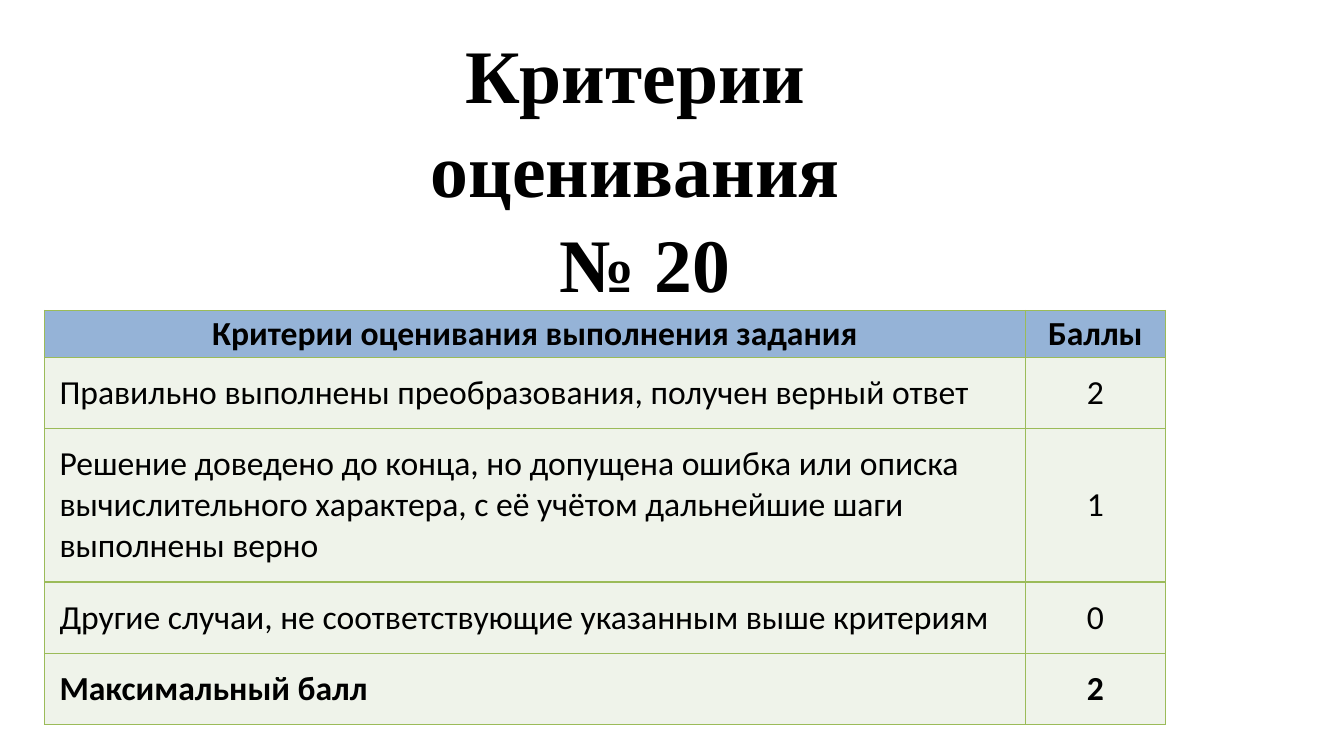
"""Build the slide with the grading criteria for task 20."""
from pptx import Presentation
from pptx.dml.color import RGBColor
from pptx.enum import text
from pptx.oxml import parse_xml
from pptx.oxml import ns
from pptx.util import Inches, Pt

TITLE_LINES = ["Критерии ", "оценивания ", "№ 20"]
ROWS = [
    ("Критерии оценивания выполнения задания", "Баллы"),
    ("Правильно выполнены преобразования, получен верный ответ", "2"),
    ("Решение доведено до конца, но допущена ошибка или описка "
     "вычислительного характера, с её учётом дальнейшие шаги выполнены верно", "1"),
    ("Другие случаи, не соответствующие указанным выше критериям", "0"),
    ("Максимальный балл", "2"),
]
COLUMN_WIDTHS = [9.73, 1.39]
ROW_HEIGHTS = [0.44, 0.68, 1.46, 0.68, 0.68]
TABLE_LEFT, TABLE_TOP = 0.44, 3.08
HEADER_FILL, BODY_FILL, BORDER, BLACK = "95B3D7", "EFF3EA", "9BBB59", "000000"


def color(hex_value):
    return RGBColor.from_string(hex_value)


def add_run(paragraph, content, font_name, size, bold):
    run = paragraph.add_run()
    run.text = content
    run.font.name = font_name
    run.font.size = Pt(size)
    run.font.bold = bold
    run.font.color.rgb = color(BLACK)


def add_borders(cell):
    properties = cell._tc.get_or_add_tcPr()
    for index, side in enumerate(("lnL", "lnR", "lnT", "lnB")):
        properties.insert(index, parse_xml(
            f'<a:{side} {ns.nsdecls("a")} w="{Pt(1)}"><a:solidFill>'
            f'<a:srgbClr val="{BORDER}"/></a:solidFill></a:{side}>'))


def add_title(slide):
    title = slide.shapes.title
    title.left, title.top = Inches(0.48), Inches(0.36)
    title.width, title.height = Inches(11.83), Inches(2.57)
    frame = title.text_frame
    frame.auto_size = text.MSO_AUTO_SIZE.NONE
    frame.vertical_anchor = text.MSO_ANCHOR.MIDDLE
    paragraph = frame.paragraphs[0]
    paragraph.alignment = text.PP_ALIGN.CENTER
    paragraph.line_spacing = 1.04
    for index, line in enumerate(TITLE_LINES):
        if index:
            paragraph.add_line_break()
        add_run(paragraph, line, "Times New Roman", 54, True)


def fill_cell(cell, content, is_header, is_bold, is_criterion):
    margin = Inches(0.15 if is_criterion else 0.03)
    cell.margin_left = cell.margin_right = margin
    cell.margin_top = cell.margin_bottom = margin
    cell.vertical_anchor = text.MSO_ANCHOR.MIDDLE
    cell.fill.solid()
    cell.fill.fore_color.rgb = color(HEADER_FILL if is_header else BODY_FILL)
    add_borders(cell)
    paragraph = cell.text_frame.paragraphs[0]
    paragraph.alignment = text.PP_ALIGN.LEFT if is_criterion else text.PP_ALIGN.CENTER
    add_run(paragraph, content, "Calibri", 24, is_bold)


def add_criteria_table(slide):
    table = slide.shapes.add_table(
        len(ROWS), len(COLUMN_WIDTHS), Inches(TABLE_LEFT), Inches(TABLE_TOP),
        Inches(sum(COLUMN_WIDTHS)), Inches(sum(ROW_HEIGHTS))).table
    table.horz_banding = False
    for column, width in zip(table.columns, COLUMN_WIDTHS):
        column.width = Inches(width)
    for row_index, (row, height) in enumerate(zip(ROWS, ROW_HEIGHTS)):
        table.rows[row_index].height = Inches(height)
        is_header = row_index == 0
        is_bold = row_index in (0, len(ROWS) - 1)
        for column_index, content in enumerate(row):
            is_criterion = column_index == 0 and not is_header
            fill_cell(table.cell(row_index, column_index), content,
                      is_header, is_bold, is_criterion)


def main():
    presentation = Presentation()
    presentation.slide_width = Inches(13.33)
    presentation.slide_height = Inches(7.5)
    slide = presentation.slides.add_slide(presentation.slide_layouts[0])
    subtitle = slide.placeholders[1].element
    subtitle.getparent().remove(subtitle)
    add_title(slide)
    add_criteria_table(slide)
    presentation.save("out.pptx")


if __name__ == "__main__":
    main()
